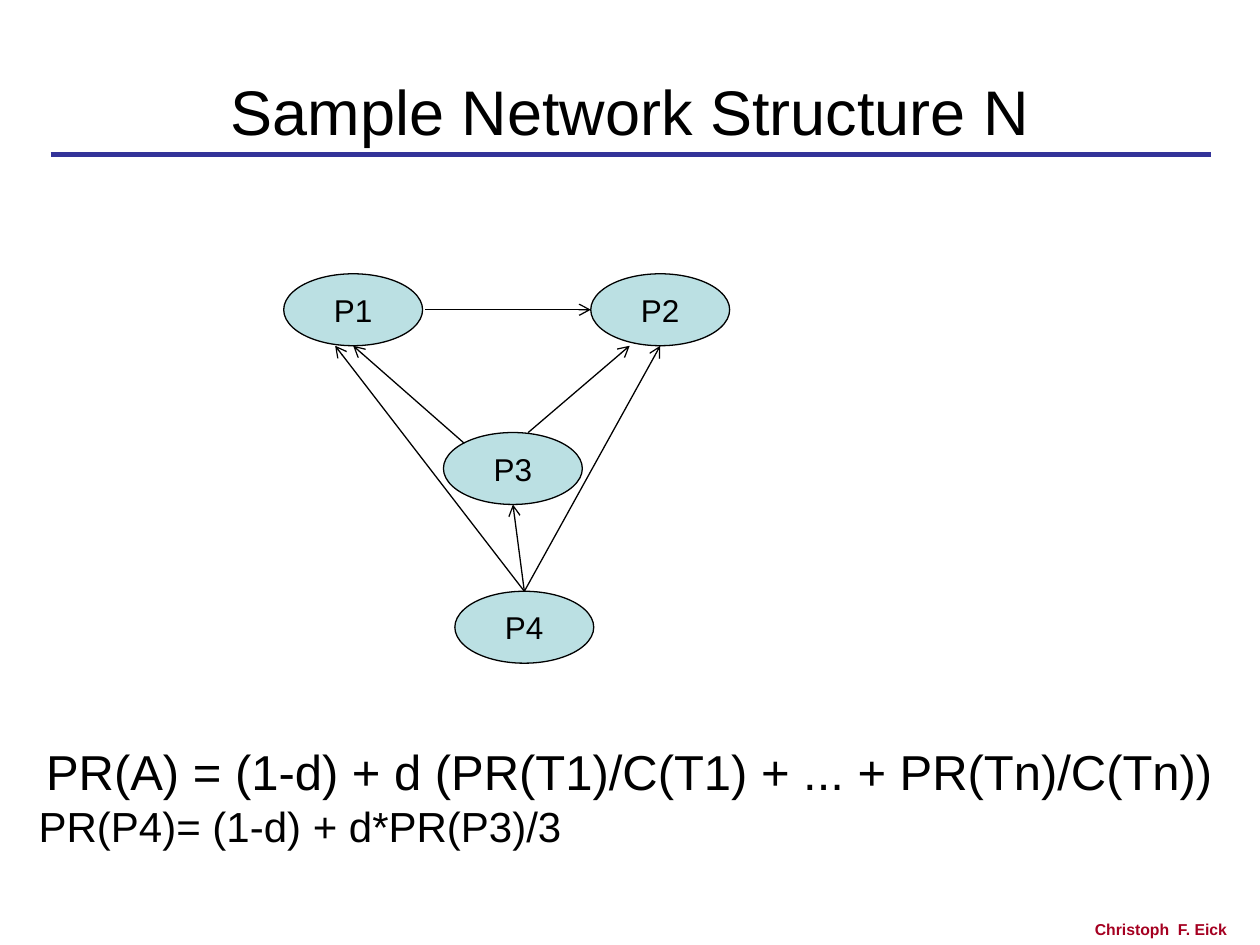
"""Build a slide showing a sample page network and its PageRank formulas."""
from lxml import etree
from pptx import Presentation
from pptx import util as u
from pptx.dml.color import RGBColor
from pptx.enum import shapes, text
from pptx.oxml.ns import qn

TITLE = "Sample Network Structure N"
AUTHOR = "Christoph  F. Eick"
FORMULAS = [
    ("PR(A) = (1-d) + d (PR(T1)/C(T1) + ... + PR(Tn)/C(Tn))", 28, "c"),
    ("PR(P4)= (1-d) + d*PR(P3)/3", 24, "l"),
]
NODE_W, NODE_H = 2.8, 1.45
TOP, ROW_STEP = 5.52, 3.2
NODES = {"P1": (5.72, 0), "P2": (11.91, 0), "P3": (8.94, 1), "P4": (9.17, 2)}
EDGES = [
    ("P4", (0.5, 0), "P3", (0.5, 1)),
    ("P3", (0.61, 0), "P2", (0.28, 1)),
    ("P1", (1.02, 0.5), "P2", (0, 0.5)),
    ("P3", (0.15, 0.15), "P1", (0.5, 1)),
    ("P4", (0.5, 0), "P2", (0.5, 1)),
    ("P4", (0.5, 0), "P1", (0.37, 1)),
]
ALIGN = {"l": text.PP_ALIGN.LEFT, "c": text.PP_ALIGN.CENTER}


def rgb(code):
    return RGBColor.from_string(code)


def write(p, content, size=18, color="000000", bold=False, align="l"):
    p.alignment = ALIGN[align]
    r = p.add_run()
    r.text = content
    r.font.name = "Arial"
    r.font.size = u.Pt(size)
    r.font.bold = bold
    r.font.color.rgb = rgb(color)


def add_line(s, start, end, color="000000", width=0.75, arrow=False):
    ends = [u.Cm(v) for v in (*start, *end)]
    line = s.shapes.add_connector(shapes.MSO_CONNECTOR.STRAIGHT, *ends)
    line.line.color.rgb = rgb(color)
    line.line.width = u.Pt(width)
    if arrow:
        etree.SubElement(line.line._get_or_add_ln(), qn("a:tailEnd"), type="arrow")
    etree.SubElement(line._element.spPr, qn("a:effectLst"))


def add_text_box(s, *box):
    tf = s.shapes.add_textbox(*map(u.Cm, box)).text_frame
    tf.word_wrap = True
    return tf


def add_title(s):
    sp = s.shapes.title
    sp.left, sp.top, sp.width, sp.height = map(u.Cm, (1.27, 1.32, 22.86, 1.8))
    tf = sp.text_frame
    tf.vertical_anchor = text.MSO_ANCHOR.MIDDLE
    write(tf.paragraphs[0], TITLE, size=36, align="c")


def add_node(s, name):
    sp = s.shapes.add_shape(
        shapes.MSO_SHAPE.OVAL, *map(u.Cm, (*anchor(name), NODE_W, NODE_H)))
    sp.shadow.inherit = False
    sp.fill.solid()
    sp.fill.fore_color.rgb = rgb("BBE0E3")
    sp.line.color.rgb = rgb("000000")
    sp.line.width = u.Pt(0.75)
    sp.text_frame.vertical_anchor = text.MSO_ANCHOR.MIDDLE
    write(sp.text_frame.paragraphs[0], name, align="c")


def anchor(name, at=(0, 0)):
    left, row = NODES[name]
    return left + at[0] * NODE_W, TOP + row * ROW_STEP + at[1] * NODE_H


def main():
    prs = Presentation()
    prs.slide_width, prs.slide_height = u.Cm(25.4), u.Cm(19.05)
    s = prs.slides.add_slide(prs.slide_layouts[5])
    add_line(s, (1.02, 3.12), (24.41, 3.12), color="333399", width=3)
    footer = add_text_box(s, 21.82, 18.42, 3.58, 0.63)
    footer.word_wrap = False
    write(footer.paragraphs[0], AUTHOR, size=9, color="A50021", bold=True)
    add_title(s)
    for name in NODES:
        add_node(s, name)
    for source, start, target, end in EDGES:
        add_line(s, anchor(source, start), anchor(target, end), arrow=True)
    tf = add_text_box(s, 0.53, 14.83, 24.31, 4.22)
    tf.word_wrap = False
    for i, (formula, size, align) in enumerate(FORMULAS):
        p = tf.add_paragraph() if i else tf.paragraphs[0]
        write(p, formula, size=size, align=align)
    prs.save("out.pptx")


if __name__ == "__main__":
    main()
